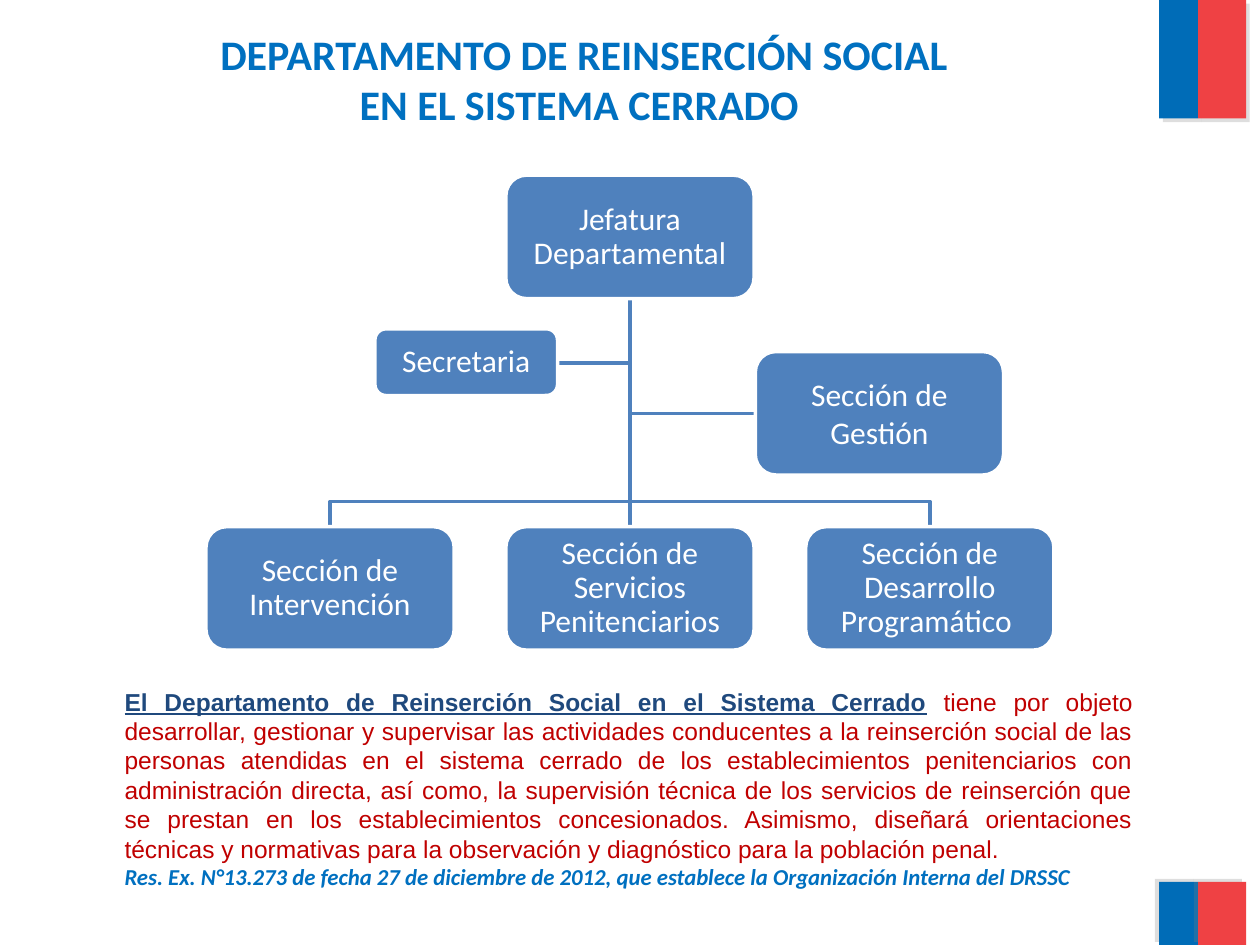
from lxml import etree
from pptx import Presentation
from pptx import util as u
from pptx.dml.color import RGBColor
from pptx.enum import shapes, text
from pptx.oxml import parse_xml
from pptx.oxml.ns import nsdecls, qn

Inches, Pt = u.Inches, u.Pt
BLUE = "4F81BD"


def color(hex_string):
    return RGBColor.from_string(hex_string)


def style(font, name, size, hex_string, bold=False, italic=False):
    font.name, font.size = name, Pt(size)
    font.bold, font.italic = bold, italic
    font.color.rgb = color(hex_string)


prs = Presentation()
prs.slide_width, prs.slide_height = Inches(10), Inches(7.5)
s = prs.slides.add_slide(prs.slide_layouts[5])

# Two-colour bands in the right corners, each with a faint offset shadow
for top, height, angle in [(0, 0.94, 45), (7, 0.5, 215)]:
    for left, width, fill in [(9.2, 0.31, "006CB7"), (9.51, 0.38, "EF4144")]:
        sp = s.shapes.add_shape(shapes.MSO_SHAPE.RECTANGLE, Inches(left),
                                Inches(top), Inches(width), Inches(height))
        sp.fill.solid()
        sp.fill.fore_color.rgb = color(fill)
        sp.line.fill.background()
        sp._element.spPr.append(parse_xml(
            f'<a:effectLst {nsdecls("a")}><a:outerShdw dist="{Pt(3)}" '
            f'dir="{angle * 60000}" algn="ctr" rotWithShape="0">'
            '<a:srgbClr val="808080"><a:alpha val="25000"/></a:srgbClr>'
            '</a:outerShdw></a:effectLst>'))

# Title
title = s.shapes.title
title.left, title.top = Inches(0.17), Inches(0.17)
title.width, title.height = Inches(8.93), Inches(0.91)
tf = title.text_frame
tf.text = "DEPARTAMENTO DE REINSERCIÓN SOCIAL\vEN EL SISTEMA CERRADO "
tf.vertical_anchor = text.MSO_ANCHOR.MIDDLE
p = tf.paragraphs[0]
p.alignment = text.PP_ALIGN.CENTER
for r in p.runs:
    style(r.font, "Calibri", 24, "0070C0", bold=True)

# Organisation chart: branches first, so that the boxes lie over their ends
CENTER, STEP = 5, 2.38
BOX_W, BOX_H = 1.97, 0.98
HEAD_TOP, ROW_TOP, BUS = 1.39, 4.18, 3.98
HEAD_BOTTOM = HEAD_TOP + BOX_H

branches = [
    [(CENTER, 2.88), (4.42, 2.88)],
    [(CENTER, 3.28), (5.99, 3.28)],
]
for x in (CENTER - STEP, CENTER + STEP):
    branches.append([(CENTER, BUS), (x, BUS), (x, ROW_TOP)])
for points in branches:
    builder = s.shapes.build_freeform(Inches(CENTER), Inches(HEAD_BOTTOM))
    builder.add_line_segments([(Inches(x), Inches(y)) for x, y in points],
                              close=False)
    sp = builder.convert_to_shape()
    sp.fill.background()
    sp.line.color.rgb = color(BLUE)
    sp.line.width = Pt(2)
    sp.shadow.inherit = False

trunk = s.shapes.add_connector(shapes.MSO_CONNECTOR.STRAIGHT,
                               Inches(CENTER), Inches(HEAD_BOTTOM),
                               Inches(CENTER), Inches(ROW_TOP))
trunk.line.color.rgb = color(BLUE)
trunk.line.width = Pt(2)
etree.SubElement(trunk._element.spPr, qn("a:effectLst"))

# label, centre x, top, width, height, line spacing
boxes = [
    ("Jefatura Departamental", CENTER, HEAD_TOP, BOX_W, BOX_H, 0.9),
    ("Sección de Intervención", CENTER - STEP, ROW_TOP, BOX_W, BOX_H, 0.9),
    ("Sección de Servicios Penitenciarios", CENTER, ROW_TOP, BOX_W, BOX_H, 0.9),
    ("Sección de Desarrollo Programático ", CENTER + STEP, ROW_TOP, BOX_W, BOX_H, 0.9),
    ("Secretaria", 3.7, 2.61, 1.45, 0.53, 0.9),
    ("Sección de Gestión", 6.98, 2.79, BOX_W, BOX_H, 1.0),
]
drawn = {}
for label, center, top, width, height, spacing in boxes:
    sp = s.shapes.add_shape(shapes.MSO_SHAPE.ROUNDED_RECTANGLE,
                            Inches(center - width / 2), Inches(top),
                            Inches(width), Inches(height))
    sp.shadow.inherit = False
    sp.fill.solid()
    sp.fill.fore_color.rgb = color(BLUE)
    sp.line.color.rgb = color("FFFFFF")
    sp.line.width = Pt(2)
    tf = sp.text_frame
    tf.word_wrap = True
    tf.vertical_anchor = text.MSO_ANCHOR.MIDDLE
    tf.margin_left = tf.margin_right = Inches(0.02)
    tf.margin_top = tf.margin_bottom = Inches(0.02)
    tf.text = label
    p = tf.paragraphs[0]
    p.alignment = text.PP_ALIGN.CENTER
    p.line_spacing = spacing
    style(p.runs[0].font, "Calibri", 18, "FFFFFF")
    drawn[label] = sp

trunk.begin_connect(drawn["Jefatura Departamental"], 2)
trunk.end_connect(drawn["Sección de Servicios Penitenciarios"], 0)

# Purpose of the department and its legal source
tf = s.shapes.add_textbox(Inches(0.89), Inches(5.4),
                          Inches(8.2), Inches(1.73)).text_frame
tf.word_wrap = True
tf.auto_size = text.MSO_AUTO_SIZE.SHAPE_TO_FIT_TEXT
p = tf.paragraphs[0]
p.alignment = text.PP_ALIGN.JUSTIFY
r = p.add_run()
r.text = "El Departamento de Reinserción Social en el Sistema Cerrado"
style(r.font, "Arial", 14, "1F497D", bold=True)
r.font.underline = True
r = p.add_run()
r.text = (
    " tiene por objeto desarrollar, gestionar y supervisar las actividades "
    "conducentes a la reinserción social de las personas atendidas en el "
    "sistema cerrado de los establecimientos penitenciarios con administración "
    "directa, así como, la supervisión técnica de los servicios de reinserción "
    "que se prestan en los establecimientos concesionados. Asimismo, diseñará "
    "orientaciones técnicas y normativas para la observación y diagnóstico "
    "para la población penal. ")
style(r.font, "Arial", 14, "C00000")
p = tf.add_paragraph()
p.text = ("Res. Ex. N°13.273 de fecha 27 de diciembre de 2012, "
          "que establece la Organización Interna del DRSSC ")
p.alignment = text.PP_ALIGN.JUSTIFY
style(p.runs[0].font, "Calibri", 13, "0070C0", bold=True, italic=True)

prs.save("out.pptx")
